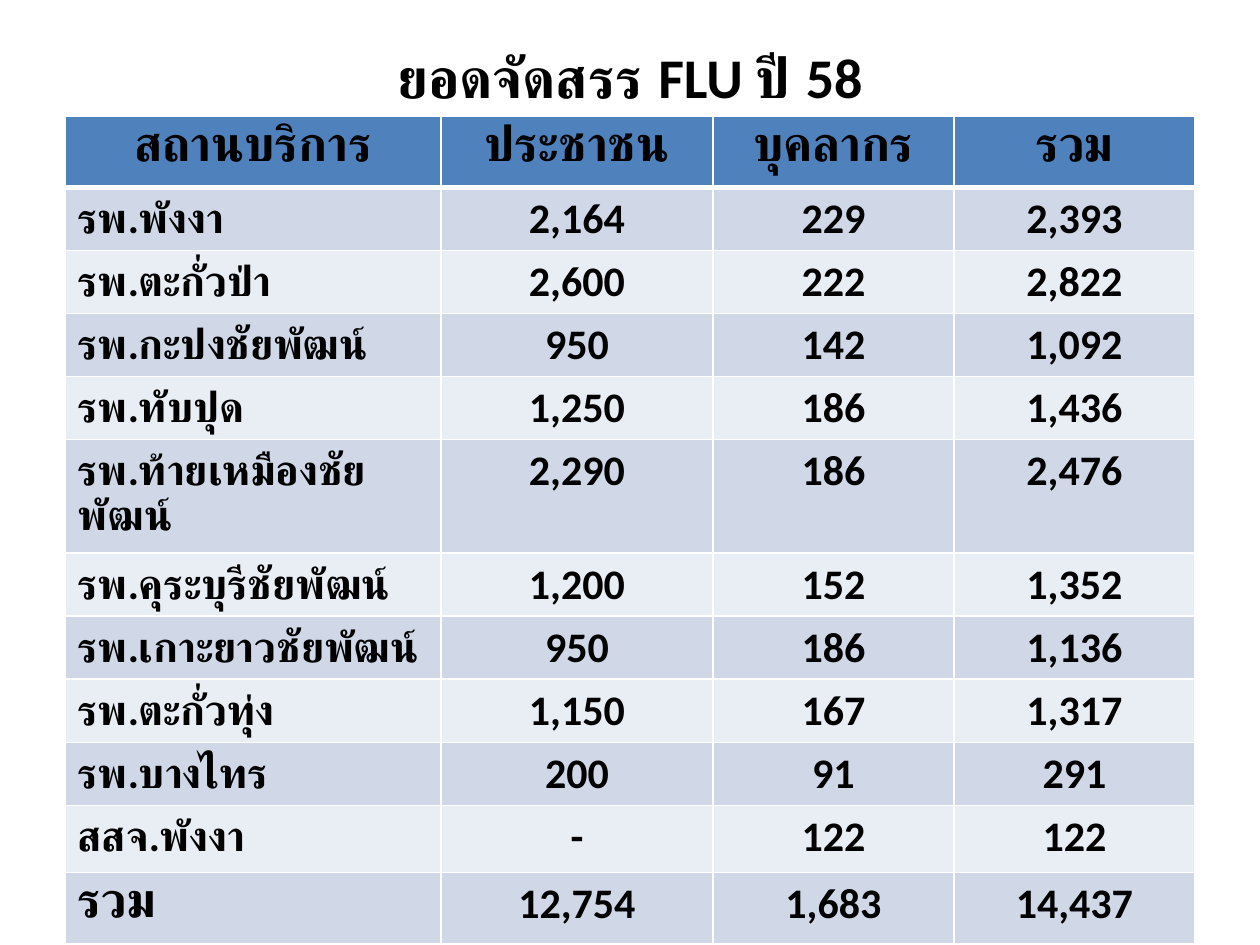
import pptx
import pptx.dml.color
import pptx.enum.text
import pptx.oxml
import pptx.oxml.ns
import pptx.util

TITLE = "ยอดจัดสรร FLU ปี 58"
HEADER = ("สถานบริการ", "ประชาชน", "บุคลากร", "รวม")
ALLOCATIONS = [
    ("รพ.พังงา", "2,164", "229", "2,393"),
    ("รพ.ตะกั่วป่า", "2,600", "222", "2,822"),
    ("รพ.กะปงชัยพัฒน์", "950", "142", "1,092"),
    ("รพ.ทับปุด", "1,250", "186", "1,436"),
    ("รพ.ท้ายเหมืองชัยพัฒน์", "2,290", "186", "2,476"),
    ("รพ.คุระบุรีชัยพัฒน์", "1,200", "152", "1,352"),
    ("รพ.เกาะยาวชัยพัฒน์", "950", "186", "1,136"),
    ("รพ.ตะกั่วทุ่ง", "1,150", "167", "1,317"),
    ("รพ.บางไทร", "200", "91", "291"),
    ("สสจ.พังงา", "-", "122", "122"),
]
TOTAL = ("รวม", "12,754", "1,683", "14,437")
ROWS = [HEADER, *ALLOCATIONS, TOTAL]

COLORS = {
    "text": "000000",
    "header": "4F81BD",
    "odd": "D0D8E8",
    "even": "E9EDF4",
    "border": "FFFFFF",
}
PX = 914400 // 126
SLIDE_SIZE = (1260, 945)
TITLE_AREA = (63, 36, 1134, 808)
TABLE_ORIGIN = (65, 116)
COLUMN_WIDTHS = (376, 272, 241, 241)
ROW_HEIGHTS = (70, *[62] * 9, 67, 70)
CENTER = pptx.enum.text.PP_ALIGN.CENTER
LEFT = pptx.enum.text.PP_ALIGN.LEFT


def emu(lengths):
    return [length * PX for length in lengths]


def rgb(name):
    return pptx.dml.color.RGBColor.from_string(COLORS[name])


def write(para, text, size, alignment):
    para.alignment = alignment
    span = para.add_run()
    span.text = text
    span.font.color.rgb = rgb("text")
    formats = {"name": "Calibri", "size": pptx.util.Pt(size), "bold": True}
    for key, value in formats.items():
        setattr(span.font, key, value)


def draw_borders(cell, bottom_width):
    widths = {"lnL": 1, "lnR": 1, "lnT": 1, "lnB": bottom_width}
    properties = cell._tc.get_or_add_tcPr()
    for position, (side, width) in enumerate(widths.items()):
        line = pptx.oxml.parse_xml(
            f'<a:{side} {pptx.oxml.ns.nsdecls("a")} w="{pptx.util.Pt(width)}">'
            f'<a:solidFill><a:srgbClr val="{COLORS["border"]}"/></a:solidFill>'
            f'</a:{side}>'
        )
        properties.insert(position, line)


def add_title(page):
    box = page.shapes.add_textbox(*emu(TITLE_AREA))
    box.text_frame.word_wrap = True
    para = box.text_frame.paragraphs[0]
    para.space_before = pptx.util.Pt(6.4)
    write(para, TITLE, 32, CENTER)


def add_allocations(page):
    size = (sum(COLUMN_WIDTHS), sum(ROW_HEIGHTS))
    frame = page.shapes.add_table(
        len(ROWS), len(HEADER), *emu(TABLE_ORIGIN), *emu(size)
    )
    table = frame.table
    table.horz_banding = False
    for column, width in zip(table.columns, emu(COLUMN_WIDTHS)):
        column.width = width
    for row, height in zip(table.rows, emu(ROW_HEIGHTS)):
        row.height = height
    for r, values in enumerate(ROWS):
        is_header = r == 0
        is_total = r == len(ROWS) - 1
        fill = "header" if is_header else "odd" if r % 2 else "even"
        for c, text in enumerate(values):
            cell = table.cell(r, c)
            cell.fill.solid()
            cell.fill.fore_color.rgb = rgb(fill)
            large = is_header or (is_total and c == 0)
            alignment = CENTER if is_header or c else LEFT
            write(cell.text_frame.paragraphs[0], text, 28 if large else 24, alignment)
            draw_borders(cell, 3 if is_header else 1)


def main():
    deck = pptx.Presentation()
    deck.slide_width, deck.slide_height = emu(SLIDE_SIZE)
    page = deck.slides.add_slide(deck.slide_layouts[6])
    add_title(page)
    add_allocations(page)
    deck.save("out.pptx")


if __name__ == "__main__":
    main()
